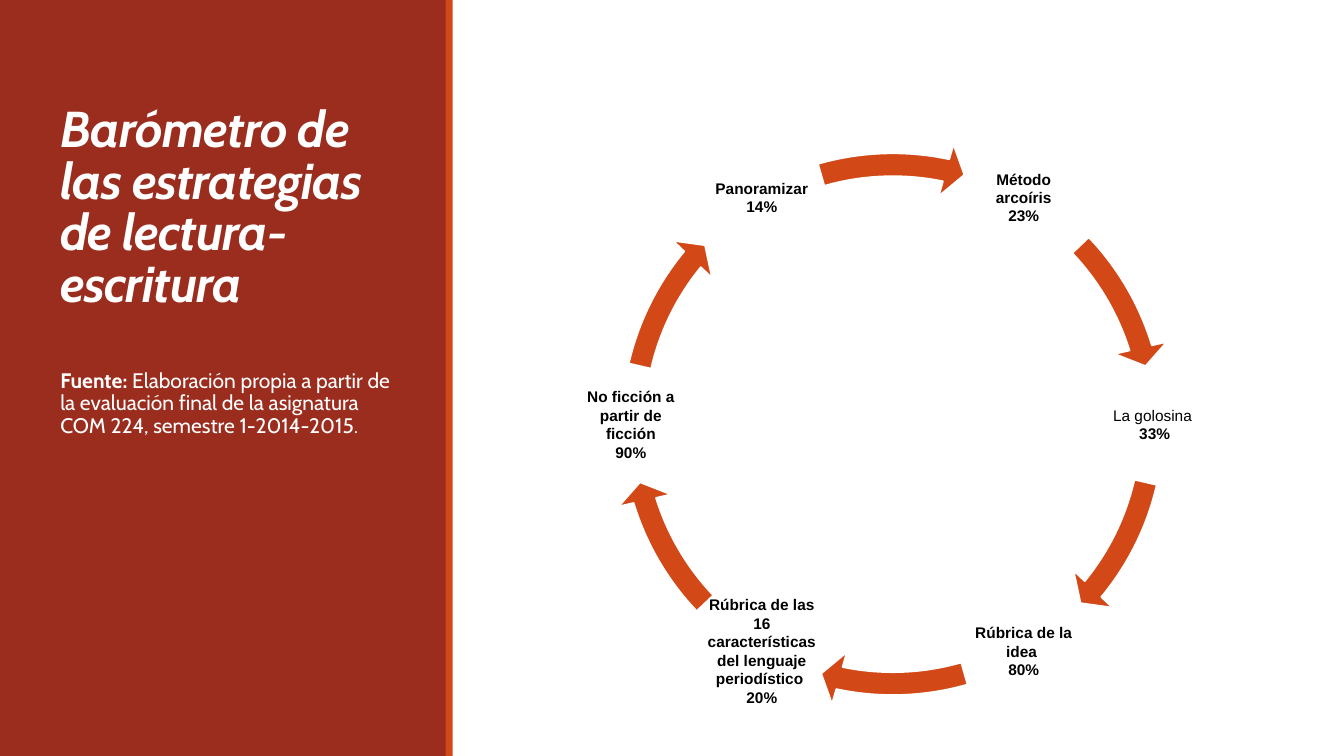
from math import cos, radians, sin

from pptx import Presentation
from pptx.dml.color import RGBColor
from pptx.enum.shapes import MSO_SHAPE as Preset
from pptx.enum.text import MSO_ANCHOR as Anchor, MSO_AUTO_SIZE as AutoSize, PP_ALIGN as Align
from pptx.util import Cm, Pt

BRICK = RGBColor(0x9B, 0x2D, 0x1F)
ORANGE = RGBColor(0xD3, 0x48, 0x17)
WHITE = RGBColor(0xFF, 0xFF, 0xFF)
BLACK = RGBColor(0x00, 0x00, 0x00)

TITLE = "Barómetro de las estrategias de lectura-escritura"
SOURCE_LEAD = "Fuente:"
SOURCE = (" Elaboración propia a partir de la evaluación final de la "
          "asignatura COM 224, semestre 1-2014-2015.")

STRATEGIES = [
    ("Método arcoíris", "23%", True),
    ("La golosina ", "33%", False),
    ("Rúbrica de la idea ", "80%", True),
    ("Rúbrica de las 16 características del lenguaje periodístico ", "20%", True),
    ("No ficción a partir de ficción", "90%", True),
    ("Panoramizar", "14%", True),
]
ARROW_SPANS = [(316.37, 342.9), (12.94, 39.46), (73.97, 101.86)]
ANGLE_UNIT = 0.6

CENTRE_X, CENTRE_Y = 22.5, 10.69
LABEL_RADIUS, LABEL_SIZE, RING_SIZE = 6.6, 2.95, 14.43


def add_run(paragraph, text, font, size, colour, bold=False, italic=False):
    """Append a formatted run and return it."""
    run = paragraph.add_run()
    run.text = text
    run.font.name = font
    run.font.size = Pt(size)
    run.font.color.rgb = colour
    run.font.bold = bold
    run.font.italic = italic
    return run


def add_band(slide, left, width, colour):
    """Draw a full-height colour band behind the title."""
    band = slide.shapes.add_shape(Preset.RECTANGLE, Cm(left), 0, Cm(width), Cm(19.05))
    band.shadow.inherit = False
    band.fill.solid()
    band.fill.fore_color.rgb = colour
    band.line.fill.background()
    slide.shapes.title.element.addprevious(band.element)


def format_title(title):
    """Place and fill the title placeholder."""
    title.left, title.top, title.width, title.height = Cm(1.27), Cm(1.65), Cm(8.89), Cm(6.35)
    frame = title.text_frame
    frame.word_wrap = True
    frame.auto_size = AutoSize.NONE
    frame.vertical_anchor = Anchor.BOTTOM
    heading = frame.paragraphs[0]
    heading.alignment = Align.LEFT
    heading.line_spacing = 0.85
    run = add_run(heading, TITLE, "Cabin", 36, WHITE, bold=True, italic=True)
    run.font._element.set("spc", "-50")


def add_source(slide):
    """Write the source note under the title."""
    note = slide.shapes.add_textbox(Cm(1.27), Cm(9.2), Cm(8.89), Cm(8.33))
    note.text_frame.word_wrap = True
    sentence = note.text_frame.paragraphs[0]
    sentence.line_spacing = 0.9
    add_run(sentence, SOURCE_LEAD, "Cabin", 15, WHITE, bold=True)
    add_run(sentence, SOURCE, "Cabin", 15, WHITE)


def add_label(slide, angle, name, share, bold_name):
    """Write a strategy and its share at an angle on the cycle."""
    left = CENTRE_X + LABEL_RADIUS * cos(radians(angle)) - LABEL_SIZE / 2
    top = CENTRE_Y + LABEL_RADIUS * sin(radians(angle)) - LABEL_SIZE / 2
    label = slide.shapes.add_textbox(Cm(left), Cm(top), Cm(LABEL_SIZE), Cm(LABEL_SIZE))
    frame = label.text_frame
    frame.word_wrap = True
    frame.vertical_anchor = Anchor.MIDDLE
    frame.margin_left = frame.margin_right = Cm(0.04)
    frame.margin_top = frame.margin_bottom = Cm(0.04)
    lines = [frame.paragraphs[0], frame.add_paragraph()]
    for line, text, bold in zip(lines, (name, share), (bold_name, True)):
        line.alignment = Align.CENTER
        add_run(line, text, "Arial", 11, BLACK, bold=bold)


def add_arrow(slide, start, end):
    """Draw a curved arrow of the cycle between two angles."""
    arrow = slide.shapes.add_shape(
        Preset.CIRCULAR_ARROW, Cm(CENTRE_X - RING_SIZE / 2), Cm(CENTRE_Y - RING_SIZE / 2),
        Cm(RING_SIZE), Cm(RING_SIZE))
    arrow.shadow.inherit = False
    arrow.fill.solid()
    arrow.fill.fore_color.rgb = ORANGE
    arrow.line.color.rgb = WHITE
    arrow.line.width = Pt(1.25)
    settings = (0.04, 2.5, end * ANGLE_UNIT, start * ANGLE_UNIT, 0.047)
    for index, setting in enumerate(settings):
        arrow.adjustments[index] = setting


def add_cycle(slide):
    """Lay out the strategies clockwise, each followed by its arrow."""
    step = 360 / len(STRATEGIES)
    for index, strategy in enumerate(STRATEGIES):
        add_label(slide, (index - 1) * step, *strategy)
        half_turn, position = divmod(index, len(ARROW_SPANS))
        start, end = ARROW_SPANS[position]
        add_arrow(slide, (start + 180 * half_turn) % 360, (end + 180 * half_turn) % 360)


def main():
    """Build and save the slide."""
    deck = Presentation()
    deck.slide_width, deck.slide_height = Cm(33.87), Cm(19.05)
    slide = deck.slides.add_slide(deck.slide_layouts[5])
    add_band(slide, 0, 11.25, BRICK)
    add_band(slide, 11.23, 0.18, ORANGE)
    format_title(slide.shapes.title)
    add_source(slide)
    add_cycle(slide)
    deck.save("out.pptx")


if __name__ == "__main__":
    main()
